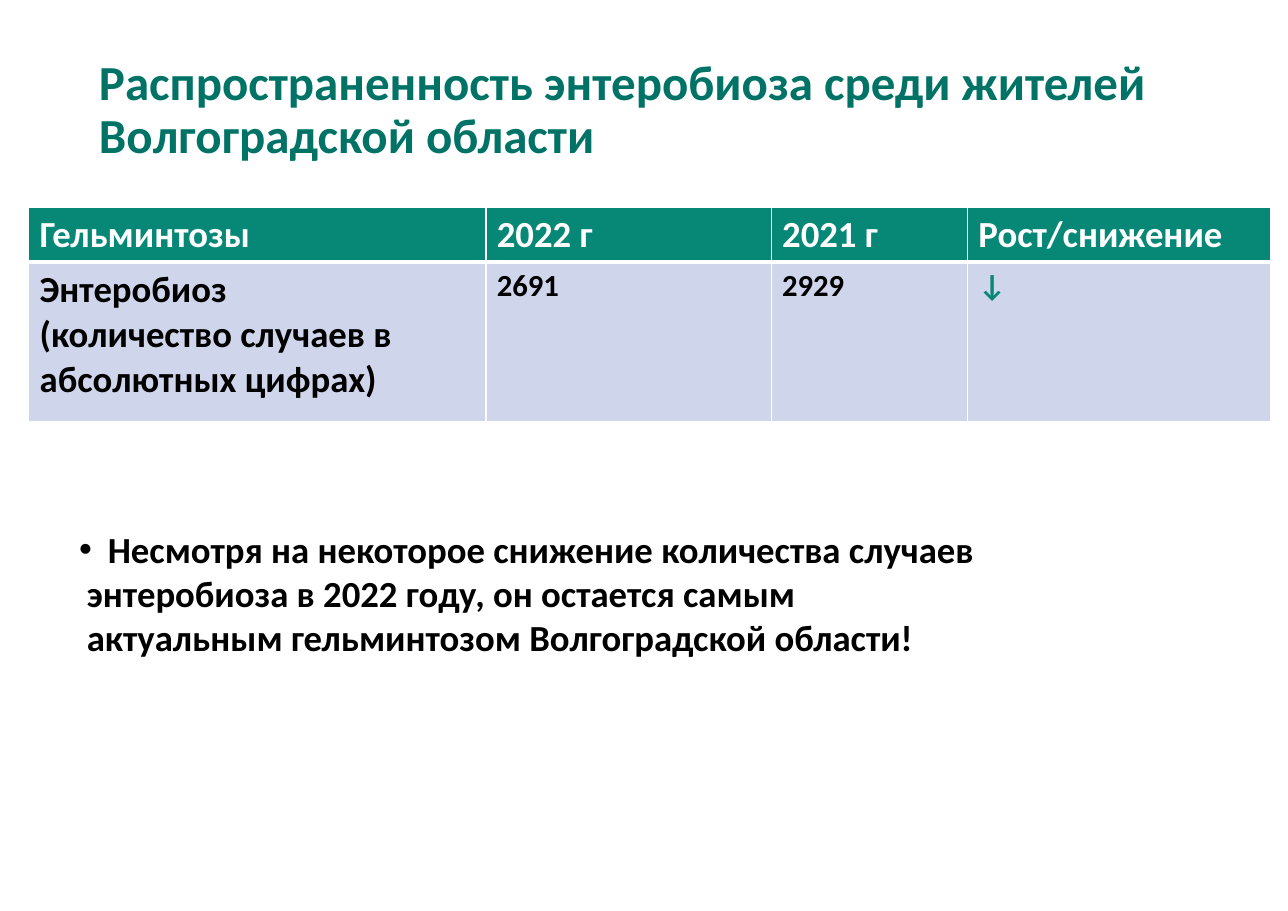
from lxml import etree
from pptx import Presentation
from pptx.dml.color import RGBColor
from pptx.enum.text import MSO_ANCHOR
from pptx.oxml.ns import qn
from pptx.util import Inches, Pt

MIDDLE, TOP = MSO_ANCHOR.MIDDLE, MSO_ANCHOR.TOP
COLORS = {
    "title": "007366",
    "accent": "078877",
    "row": "CFD5EA",
    "white": "FFFFFF",
    "black": "000000",
}


class SlideBuilder:
    font_name = "Calibri"

    def __init__(self, slide):
        self.slide = slide

    def add_lines(self, frame, lines, size, color, line_spacing=1.0):
        """Fill a text frame with one bold paragraph per line."""
        style = {"name": self.font_name, "size": Pt(size), "bold": True}
        for index, line in enumerate(lines):
            paragraph = frame.add_paragraph() if index else frame.paragraphs[0]
            paragraph.line_spacing = line_spacing
            run = paragraph.add_run()
            run.text = line
            for attribute, value in style.items():
                setattr(run.font, attribute, value)
            run.font.color.rgb = RGBColor.from_string(COLORS[color])

    def text(self, box, lines, size, color, anchor=TOP, line_spacing=1.0):
        frame = self.slide.shapes.add_textbox(*map(Inches, box)).text_frame
        frame.word_wrap = True
        frame.vertical_anchor = anchor
        self.add_lines(frame, lines, size, color, line_spacing)
        return frame.paragraphs

    def indent(self, paragraph, left, bullet=None):
        """Set the left margin; a bullet hangs at the frame edge."""
        properties = paragraph._p.get_or_add_pPr()
        properties.set("marL", str(Inches(left)))
        properties.set("indent", str(-Inches(left) if bullet else 0))
        if bullet:
            etree.SubElement(properties, qn("a:buFont"), typeface="Arial")
            etree.SubElement(properties, qn("a:buChar"), char=bullet)

    def border(self, cell, widths):
        """Draw white cell edges; widths are points for L, R, T, B."""
        properties = cell._tc.get_or_add_tcPr()
        for side, width in zip("LRTB", widths):
            line = etree.SubElement(properties, qn(f"a:ln{side}"), w=str(Pt(width)))
            fill = etree.SubElement(line, qn("a:solidFill"))
            etree.SubElement(fill, qn("a:srgbClr"), val=COLORS["white"])

    def table(self, left, top, column_widths, row_heights, rows, row_styles):
        """Each cell is (lines, size, color); each row style is (fill, widths)."""
        size = sum(column_widths), sum(row_heights)
        table = self.slide.shapes.add_table(
            len(rows), len(column_widths), *map(Inches, (left, top, *size))
        ).table
        for column, width in zip(table.columns, column_widths):
            column.width = Inches(width)
        for row, height, cells, (fill, widths) in zip(
            table.rows, row_heights, rows, row_styles
        ):
            row.height = Inches(height)
            for cell, content in zip(row.cells, cells):
                self.border(cell, widths)
                cell.fill.solid()
                cell.fill.fore_color.rgb = RGBColor.from_string(COLORS[fill])
                self.add_lines(cell.text_frame, *content)


def main():
    presentation = Presentation()
    presentation.slide_width = Inches(11.69)
    presentation.slide_height = Inches(8.27)
    builder = SlideBuilder(presentation.slides.add_slide(presentation.slide_layouts[6]))

    builder.text(
        (0.8, 0.44, 10.08, 1.14),
        ["Распространенность энтеробиоза среди жителей Волгоградской области"],
        32, "title", MIDDLE, 0.9,
    )

    headings = ["Гельминтозы", "2022 г", "2021 г", "Рост/снижение"]
    disease = ["Энтеробиоз", "(количество случаев в абсолютных цифрах)"]
    builder.table(
        0.26, 1.88, [4.15, 2.59, 1.78, 2.75], [0.49, 1.45],
        [
            [([heading], 24, "white") for heading in headings],
            [
                (disease, 24, "black"),
                (["2691"], 20, "black"),
                (["2929"], 20, "black"),
                (["↓"], 20, "accent"),
            ],
        ],
        [("accent", (1, 1, 1, 3)), ("row", (1, 1, 3, 1))],
    )

    first_line, *other_lines = builder.text(
        (0.62, 4.73, 9.72, 1.31),
        [
            "Несмотря на некоторое снижение количества случаев",
            "энтеробиоза в 2022 году, он остается самым",
            "актуальным гельминтозом Волгоградской области!",
        ],
        24, "black",
    )
    builder.indent(first_line, 0.26, "•")
    for line in other_lines:
        builder.indent(line, 0.07)

    presentation.save("out.pptx")


if __name__ == "__main__":
    main()
